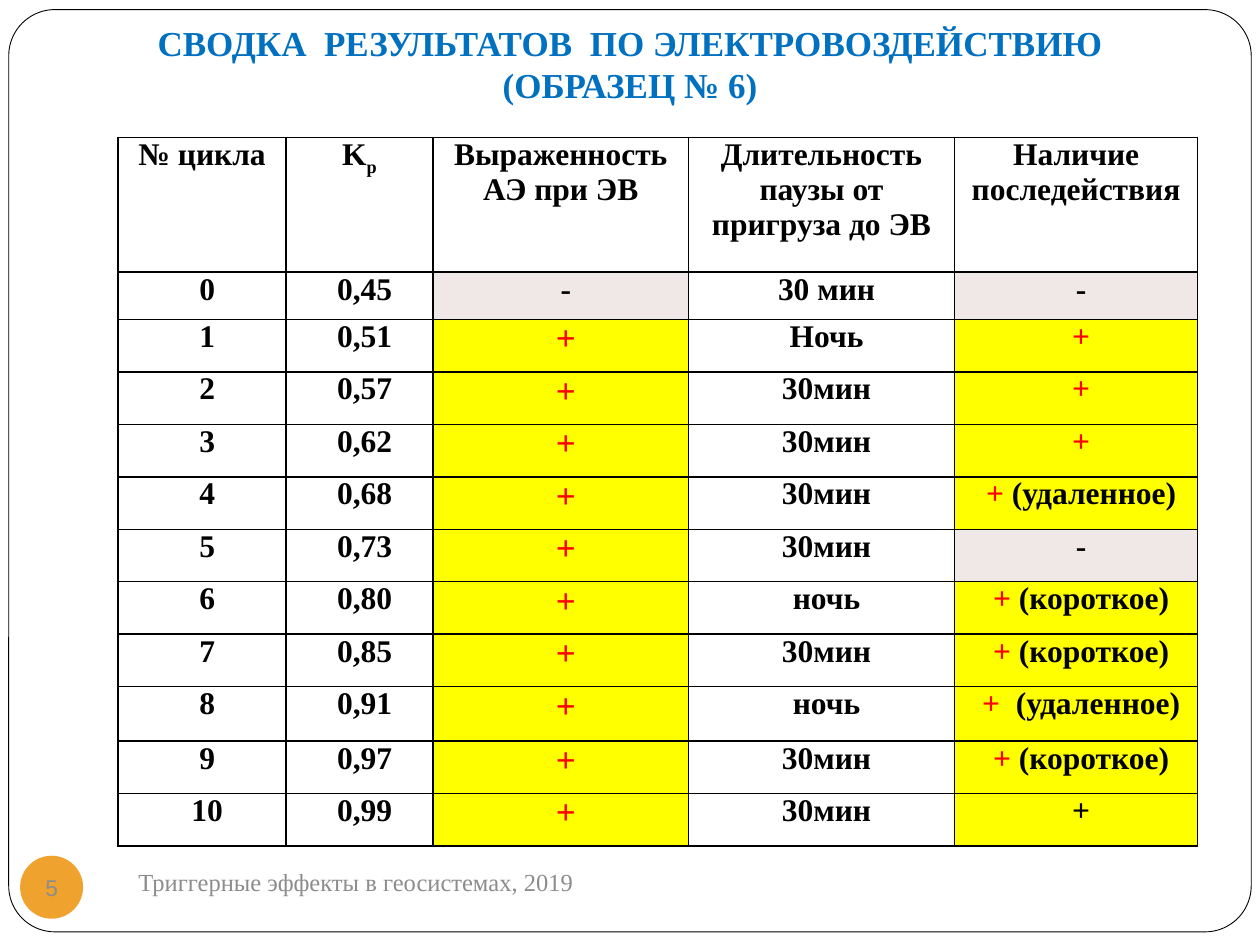
from dataclasses import dataclass
from typing import NamedTuple

from lxml.etree import SubElement
from pptx import Presentation
from pptx.dml.color import RGBColor
from pptx.enum.shapes import MSO_SHAPE as Preset
from pptx.enum.text import MSO_ANCHOR as Anchor, PP_ALIGN as Align
from pptx.oxml.ns import qn
from pptx.util import Pt


@dataclass(frozen=True)
class Theme:
    serif: str = "Times New Roman"
    sans: str = "Arial"
    black: str = "000000"
    white: str = "FFFFFF"
    title: str = "0070C0"
    muted: str = "8C8C8C"
    badge: str = "F0A22E"
    plus: str = "FF0000"
    present: str = "FFFF00"
    absent: str = "F0E8E6"
    title_size: float = 20
    table_size: float = 18
    plus_size: float = 20
    footer_size: float = 14
    number_size: float = 13


THEME = Theme()


class Box(NamedTuple):
    left: float
    top: float
    width: float
    height: float


class Part(NamedTuple):
    """A stretch of text in one style."""
    text: str
    color: str = THEME.black
    size: float = THEME.table_size
    bold: bool = True
    font: str = THEME.serif
    subscript: bool = False


class Cycle(NamedTuple):
    number: str
    ratio: str
    emission: str
    pause: str
    aftereffect: str


HEADERS = [
    [[Part("№ цикла")]],
    [[Part("K"), Part("p", subscript=True)]],
    [[Part("Выраженность")], [Part("АЭ при ЭВ")]],
    [[Part("Длительность")], [Part("паузы от пригруза до ЭВ")]],
    [[Part("Наличие последействия")]],
]
CYCLES = [
    Cycle("0", "0,45", "-", "30 мин", "-"),
    Cycle("1", "0,51", "+", "Ночь", "+"),
    Cycle("2", "0,57", "+", "30мин", "+"),
    Cycle("3", "0,62", "+", "30мин", "+"),
    Cycle("4", "0,68", "+", "30мин", "+ (удаленное)"),
    Cycle("5", "0,73", "+", "30мин", "-"),
    Cycle("6", "0,80", "+", "ночь", "+ (короткое)"),
    Cycle("7", "0,85", "+", "30мин", "+ (короткое)"),
    Cycle("8", "0,91", "+", "ночь", "+  (удаленное)"),
    Cycle("9", "0,97", "+", "30мин", "+ (короткое)"),
    Cycle("10", "0,99", "+", "30мин", "+"),
]
COLUMN_WIDTHS = [96, 84, 146, 152, 139]
HEADER_HEIGHT, FIRST_HEIGHT, ROW_HEIGHT, TALL_HEIGHT = 77, 27, 30, 31
ROW_HEIGHTS = [HEADER_HEIGHT, FIRST_HEIGHT, *[ROW_HEIGHT] * 7, TALL_HEIGHT,
               *[ROW_HEIGHT] * 2]


def rgb(color: str) -> RGBColor:
    return RGBColor.from_string(color)


def write_paragraph(paragraph, parts: list[Part], align=Align.CENTER, indent: float = 0) -> None:
    if indent:
        paragraph._p.get_or_add_pPr().set("marL", str(Pt(indent)))
    paragraph.alignment = align
    paragraph.text = parts[0].text
    for part in parts[1:]:
        paragraph.add_run().text = part.text
    for run, part in zip(paragraph.runs, parts):
        style_run(run, part)


def style_run(run, part: Part) -> None:
    run.font.name = part.font
    run.font.size = Pt(part.size)
    run.font.bold = part.bold
    run.font.color.rgb = rgb(part.color)
    if part.subscript:
        run.font._element.set("baseline", "-25000")


def set_insets(frame, left: float, top: float, right: float, bottom: float) -> None:
    frame.margin_left, frame.margin_top = Pt(left), Pt(top)
    frame.margin_right, frame.margin_bottom = Pt(right), Pt(bottom)


def add_text(slide, box: Box, lines: list[Part], anchor, align, bottom: float = 3.6) -> None:
    """Add a text box whose lines are joined by line breaks in one paragraph."""
    frame = slide.shapes.add_textbox(*map(Pt, box)).text_frame
    frame.word_wrap = True
    frame.vertical_anchor = anchor
    set_insets(frame, 7.2, 3.6, 7.2, bottom)
    paragraph = frame.paragraphs[0]
    paragraph.text = lines[0].text
    paragraph.alignment = align
    for line in lines[1:]:
        paragraph.add_line_break()
        paragraph.add_run().text = line.text
    for run, line in zip(paragraph.runs, lines):
        style_run(run, line)


def add_preset(slide, preset, box: Box, fill: str):
    shape = slide.shapes.add_shape(preset, *map(Pt, box))
    shape.shadow.inherit = False
    shape.fill.solid()
    shape.fill.fore_color.rgb = rgb(fill)
    return shape


def border_cell(cell) -> None:
    properties = cell._tc.get_or_add_tcPr()
    for side in ("lnL", "lnR", "lnT", "lnB"):
        line = SubElement(properties, qn(f"a:{side}"), w=str(Pt(1)))
        fill = SubElement(line, qn("a:solidFill"))
        SubElement(fill, qn("a:srgbClr"), val=THEME.black)


def fill_cell(cell, paragraphs: list[list[Part]], fill: str | None, indent: float) -> None:
    border_cell(cell)
    if fill:
        cell.fill.solid()
        cell.fill.fore_color.rgb = rgb(fill)
    else:
        cell.fill.background()
    set_insets(cell, 5, 0, 5, 0)
    frame = cell.text_frame
    for index, parts in enumerate(paragraphs):
        paragraph = frame.add_paragraph() if index else frame.paragraphs[0]
        write_paragraph(paragraph, parts, indent=indent)


def cycle_parts(cycle: Cycle, field: str) -> list[Part]:
    """Set a leading plus apart in red, except the last cycle's aftereffect."""
    text = getattr(cycle, field)
    if not text.startswith("+") or (cycle is CYCLES[-1] and field == "aftereffect"):
        return [Part(text)]
    size = THEME.plus_size if field == "emission" else THEME.table_size
    parts = [Part("+", THEME.plus, size)]
    return parts + [Part(text[1:])] if text[1:] else parts


def add_results_table(slide, left: float, top: float) -> None:
    box = Box(left, top, sum(COLUMN_WIDTHS), sum(ROW_HEIGHTS))
    table = slide.shapes.add_table(len(ROW_HEIGHTS), len(COLUMN_WIDTHS), *map(Pt, box)).table
    table.first_row = table.horz_banding = False
    for column, width in zip(table.columns, COLUMN_WIDTHS):
        column.width = Pt(width)
    for row, height in zip(table.rows, ROW_HEIGHTS):
        row.height = Pt(height)
    for column, paragraphs in enumerate(HEADERS):
        fill_cell(table.cell(0, column), paragraphs, None, indent=0)
    fills = {"+": THEME.present, "-": THEME.absent}
    for row, cycle in enumerate(CYCLES, start=1):
        for column, field in enumerate(Cycle._fields):
            fill = fills.get(cycle[column][0])
            fill_cell(table.cell(row, column), [cycle_parts(cycle, field)], fill, indent=5.76)


def main() -> None:
    presentation = Presentation()
    presentation.slide_width, presentation.slide_height = Pt(720), Pt(540)
    slide = presentation.slides.add_slide(presentation.slide_layouts[6])

    frame = add_preset(slide, Preset.ROUNDED_RECTANGLE, Box(5, 5.5, 710, 527), THEME.white)
    frame.adjustments[0] = 0.05
    frame.line.color.rgb = rgb(THEME.black)
    frame.line.width = Pt(0.5)

    title = ["СВОДКА  РЕЗУЛЬТАТОВ  ПО ЭЛЕКТРОВОЗДЕЙСТВИЮ", "(ОБРАЗЕЦ № 6)"]
    add_text(slide, Box(36, 0, 648, 67.5),
             [Part(line, THEME.title, THEME.title_size) for line in title],
             Anchor.BOTTOM, Align.CENTER, bottom=7.2)
    add_text(slide, Box(72, 486, 312, 36),
             [Part("Триггерные эффекты в геосистемах, 2019", THEME.muted,
                   THEME.footer_size, bold=False)],
             Anchor.MIDDLE, Align.LEFT)

    badge = add_preset(slide, Preset.OVAL, Box(11.5, 489, 36, 36), THEME.badge)
    badge.line.fill.background()
    set_insets(badge.text_frame, 0, 0, 0, 0)
    badge.text_frame.vertical_anchor = Anchor.MIDDLE
    write_paragraph(badge.text_frame.paragraphs[0],
                    [Part("5", THEME.muted, THEME.number_size, False, THEME.sans)])

    add_results_table(slide, 67.5, 78.5)
    presentation.save("out.pptx")


if __name__ == "__main__":
    main()
